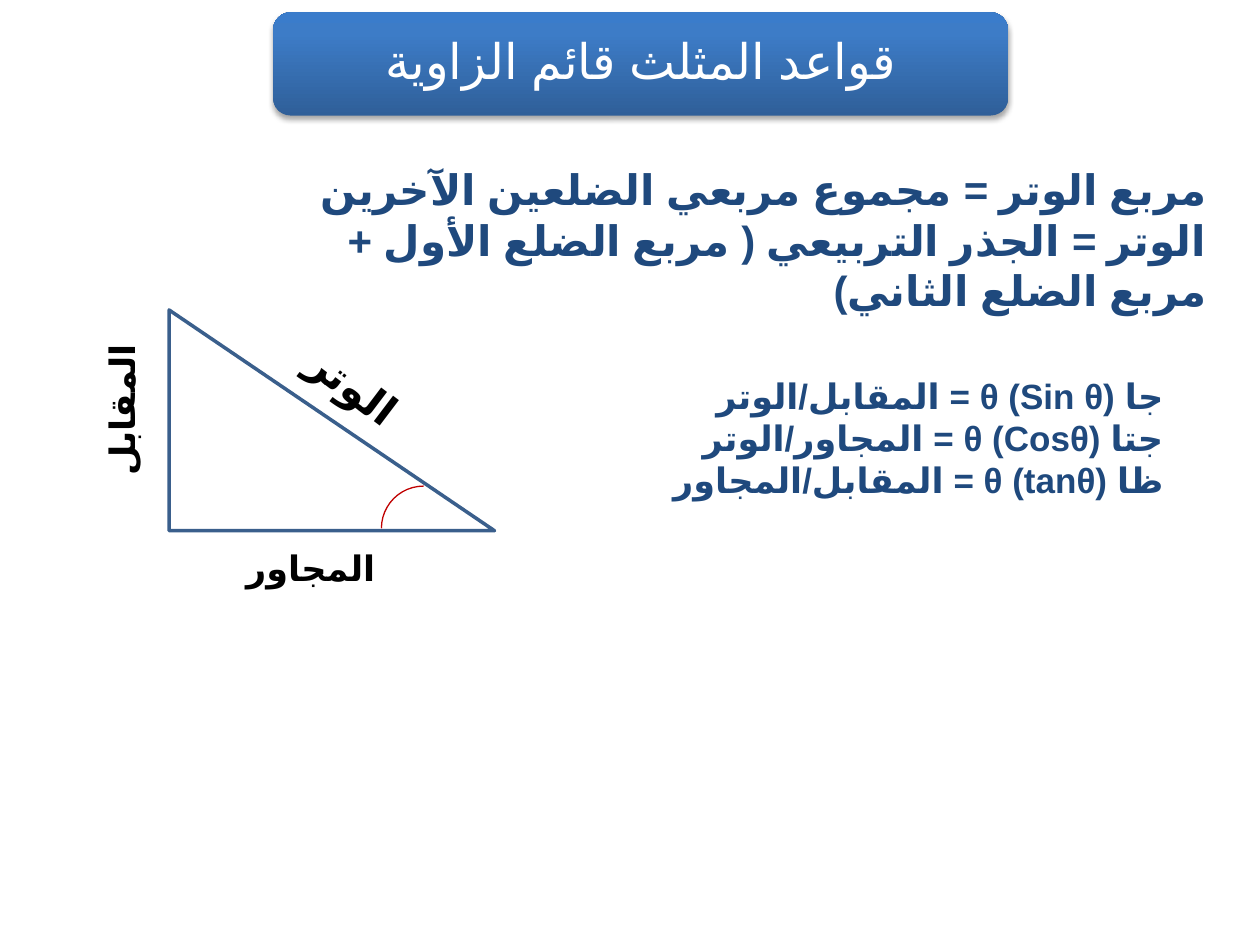
import lxml.etree
import pptx
import pptx.dml.color
import pptx.enum.shapes
import pptx.enum.text
import pptx.oxml
import pptx.oxml.ns
import pptx.util
from dataclasses import dataclass

Cm = pptx.util.Cm
SHAPE = pptx.enum.shapes.MSO_SHAPE
ALIGN = pptx.enum.text.PP_ALIGN
ANCHOR = pptx.enum.text.MSO_ANCHOR


@dataclass(frozen=True)
class Theme:
    navy: str = "1F497D"
    black: str = "000000"
    white: str = "FFFFFF"
    outline: str = "3A5F8C"
    angle: str = "C00000"
    bar_stops: tuple = ((0, "2F5F99"), (80, "3D7CC7"), (100, "3A7CCB"))
    title_size: int = 28
    large_size: int = 24
    body_size: int = 20
    latin: str = "Calibri"
    formula: str = "Arial"
    label: str = "Lato"
    arabic: str = "Arial"


def set_values(target, values):
    for name, value in values.items():
        setattr(target, name, value)


class SlideBuilder:
    def __init__(self, deck, theme):
        self.theme = theme
        self.page = deck.slides.add_slide(deck.slide_layouts[6])

    def text(self, place, paras, size, color, align, parent=None, rtl=False,
             bold=True, rotation=0, frame=None, spacing=None):
        """Each paragraph is a list of (text, font name) spans."""
        shapes = (parent or self.page).shapes
        box = shapes.add_textbox(*map(Cm, place))
        box.rotation = rotation
        set_values(box.text_frame, {"word_wrap": True, **(frame or {})})
        for index, spans in enumerate(paras):
            para = (box.text_frame.add_paragraph() if index
                    else box.text_frame.paragraphs[0])
            set_values(para, {"alignment": align, "line_spacing": spacing})
            if rtl:
                para._p.get_or_add_pPr().set("rtl", "1")
            for words, font in spans:
                span = para.add_run()
                span.text = words
                set_values(span.font, {"name": font, "bold": bold,
                                       "size": pptx.util.Pt(size)})
                span.font.color.rgb = pptx.dml.color.RGBColor.from_string(color)
                # Arabic letters use the complex-script font
                style = span._r.get_or_add_rPr()
                style.set("lang", "ar-SA")
                lxml.etree.SubElement(style, pptx.oxml.ns.qn("a:cs"),
                                      typeface=self.theme.arabic)

    def outline(self, kind, place, color, width, flip=False):
        shape = self.page.shapes.add_shape(kind, *map(Cm, place))
        shape.shadow.inherit = False
        shape.fill.background()
        shape.line.color.rgb = pptx.dml.color.RGBColor.from_string(color)
        shape.line.width = pptx.util.Pt(width)
        if flip:
            shape._element.spPr.find(pptx.oxml.ns.qn("a:xfrm")).set("flipH", "1")

    def title_bar(self, place, inset, title):
        group = self.page.shapes.add_group_shape()
        bar = group.shapes.add_shape(SHAPE.ROUNDED_RECTANGLE, *map(Cm, place))
        bar.line.fill.background()

        # Gradient rising from the bottom edge
        bar.fill.gradient()
        bar.fill.gradient_angle = 90
        stops = bar._element.spPr.find(".//" + pptx.oxml.ns.qn("a:gsLst"))
        for stop in list(stops):
            stops.remove(stop)
        for position, color in self.theme.bar_stops:
            stop = lxml.etree.SubElement(stops, pptx.oxml.ns.qn("a:gs"),
                                         pos=str(position * 1000))
            lxml.etree.SubElement(stop, pptx.oxml.ns.qn("a:srgbClr"), val=color)

        # Soft shadow below
        bar.shadow.inherit = False
        effects = bar._element.spPr.find(pptx.oxml.ns.qn("a:effectLst"))
        effects.append(pptx.oxml.parse_xml(
            f'<a:outerShdw {pptx.oxml.ns.nsdecls("a")} dist="{pptx.util.Pt(1.8)}" '
            f'blurRad="{pptx.util.Pt(3.1)}" dir="5400000" rotWithShape="0">'
            f'<a:srgbClr val="{self.theme.black}"><a:alpha val="35000"/>'
            '</a:srgbClr></a:outerShdw>'))

        left, top, width, height = place
        margins = ("margin_left", "margin_top", "margin_right", "margin_bottom")
        self.text((left + inset, top + inset, width - 2 * inset, height - 2 * inset),
                  [[(title, self.theme.latin)]], self.theme.title_size,
                  self.theme.white, ALIGN.CENTER, parent=group, rtl=True,
                  bold=False, spacing=0.9,
                  frame={"vertical_anchor": ANCHOR.MIDDLE,
                         **{name: Cm(0.3) for name in margins}})


def main():
    theme = Theme()
    deck = pptx.Presentation()
    set_values(deck, {"slide_width": Cm(25.4), "slide_height": Cm(19.05)})
    slide = SlideBuilder(deck, theme)

    # Title
    slide.title_bar((5.51, 0.25, 14.81, 2.08), 0.1, "قواعد المثلث قائم الزاوية")

    # Right triangle with its side labels and angle
    slide.outline(SHAPE.RIGHT_TRIANGLE, (3.41, 6.25, 6.56, 4.45), theme.outline, 2)
    for words, left, top, height, size, rotation in (
            ("المجاور", 4.04, 10.9, 1.12, theme.body_size, 0),
            ("المقابل", 0.23, 7.7, 1.12, theme.body_size, 270),
            ("الوتر", 4.9, 7.14, 1.27, theme.large_size, 37.1)):
        slide.text((left, top, 4.45, height), [[(words, theme.label)]], size,
                   theme.black, ALIGN.CENTER, rotation=rotation)
    slide.outline(SHAPE.ARC, (7.69, 9.8, 1.7, 1.7), theme.angle, 0.75, flip=True)

    # Trigonometric ratios
    ratios = (("جا ", "θ (Sin θ) \t= المقابل/الوتر"),
              ("جتا ", "θ (Cosθ) \t= المجاور/الوتر"),
              ("ظا ", "θ (tanθ) \t= المقابل/المجاور"))
    slide.text((12.27, 7.42, 11.43, 4.52),
               [[(name, theme.latin), (rule, theme.formula)] for name, rule in ratios],
               theme.body_size, theme.navy, ALIGN.RIGHT, rtl=True)

    # Pythagorean rule
    slide.text((5.72, 3.18, 18.85, 3.33),
               [[("مربع الوتر = مجموع مربعي الضلعين الآخرين", theme.latin)],
                [("الوتر = الجذر التربيعي ( مربع الضلع الأول + مربع الضلع الثاني)",
                  theme.formula)]],
               theme.large_size, theme.navy, ALIGN.RIGHT, rtl=True)

    deck.save("out.pptx")


if __name__ == "__main__":
    main()
